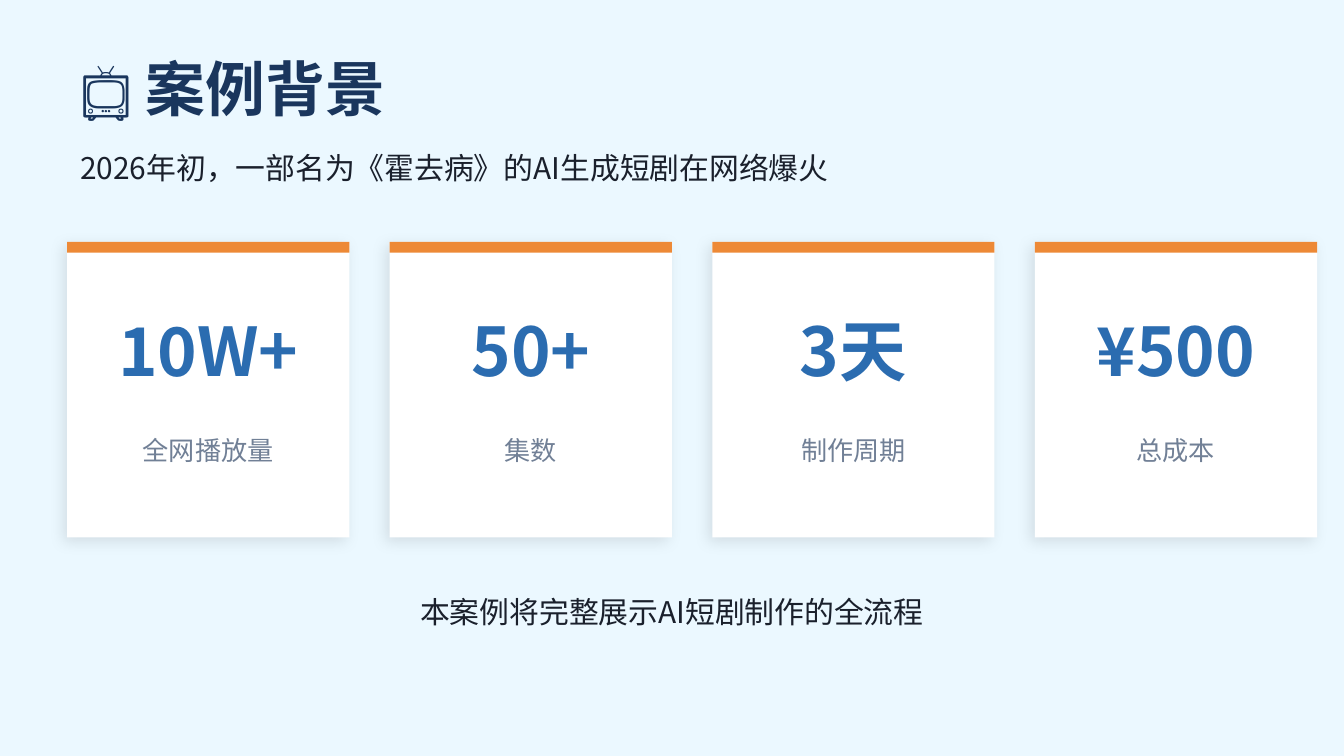
from lxml import etree
from pptx import Presentation
from pptx.dml.color import RGBColor
from pptx.enum.shapes import MSO_SHAPE
from pptx.enum.text import MSO_ANCHOR, MSO_AUTO_SIZE, PP_ALIGN
from pptx.oxml import parse_xml
from pptx.oxml.ns import nsdecls, qn
from pptx.util import Inches, Pt

RECTANGLE = MSO_SHAPE.RECTANGLE
MIDDLE = MSO_ANCHOR.MIDDLE
NO_AUTOFIT = MSO_AUTO_SIZE.NONE
LEFT, CENTER = PP_ALIGN.LEFT, PP_ALIGN.CENTER

PALE_BLUE = RGBColor(0xEB, 0xF8, 0xFF)
NAVY = RGBColor(0x1A, 0x36, 0x5D)
INK = RGBColor(0x1A, 0x20, 0x2C)
WHITE = RGBColor(0xFF, 0xFF, 0xFF)
ORANGE = RGBColor(0xED, 0x89, 0x36)
BLUE = RGBColor(0x2B, 0x6C, 0xB0)
GREY = RGBColor(0x71, 0x80, 0x96)

FONT = "Noto Sans CJK SC"
TITLE_STYLE = {"size": Pt(32), "bold": True, "color": NAVY}
BODY_STYLE = {"size": Pt(16), "bold": False, "color": INK}
NUMBER_STYLE = {"size": Pt(36), "bold": True, "color": BLUE}
LABEL_STYLE = {"size": Pt(14), "bold": False, "color": GREY}

# Page grid, 16:9
SLIDE_WIDTH = Inches(10)
SLIDE_HEIGHT = SLIDE_WIDTH * 9 // 16
MARGIN = Inches(0.5)
CONTENT_WIDTH = SLIDE_WIDTH - 2 * MARGIN
LINE_HEIGHT = Inches(0.5)
CARD_WIDTH, CARD_HEIGHT = Inches(2.1), Inches(2.2)
CARD_GAP = Inches(0.3)
CARD_ROWS = 22  # rows of the grid inside a card

METRICS = [
    ("10W+", "全网播放量"),
    ("50+", "集数"),
    ("3天", "制作周期"),
    ("¥500", "总成本"),
]


def place(shape, box):
    shape.left, shape.top, shape.width, shape.height = map(round, box)


def write_text(shape, text, style, alignment=LEFT):
    frame = shape.text_frame
    frame.word_wrap = True
    frame.auto_size = NO_AUTOFIT
    frame.vertical_anchor = MIDDLE
    paragraph = frame.paragraphs[0]
    paragraph.alignment = alignment
    run = paragraph.add_run()
    run.text = text
    font = run.font
    font.name = FONT
    for name, value in style.items():
        if name == "color":
            font.color.rgb = value
        else:
            setattr(font, name, value)
    # East Asian characters take their own font entry
    east_asian = etree.SubElement(run._r.get_or_add_rPr(), qn("a:ea"))
    east_asian.set("typeface", FONT)


def add_text(slide, box, text, style, alignment=LEFT):
    textbox = slide.shapes.add_textbox(*map(round, box))
    write_text(textbox, text, style, alignment)


def add_rectangle(slide, box, color):
    shape = slide.shapes.add_shape(RECTANGLE, *map(round, box))
    shape.shadow.inherit = False
    shape.fill.solid()
    shape.fill.fore_color.rgb = color
    shape.line.fill.background()
    return shape


def add_soft_shadow(shape):
    effects = shape._element.spPr.find(qn("a:effectLst"))
    effects.append(parse_xml(
        f'<a:outerShdw {nsdecls("a")} blurRad="{Pt(8)}" dist="{Pt(3)}"'
        f' dir="{135 * 60000}" algn="bl" rotWithShape="0">'
        '<a:srgbClr val="000000"><a:alpha val="10000"/></a:srgbClr>'
        "</a:outerShdw>"
    ))


def add_header(slide, box, title, subtitle):
    left, top, width, height = box
    title_height = height - LINE_HEIGHT
    place(slide.shapes.title, (left, top, width, title_height))
    write_text(slide.shapes.title, title, TITLE_STYLE)
    add_text(slide, (left, top + title_height, width, LINE_HEIGHT),
             subtitle, BODY_STYLE)


def add_card(slide, box, number, label):
    left, top, width, height = box
    row = height / CARD_ROWS
    add_soft_shadow(add_rectangle(slide, box, WHITE))
    add_rectangle(slide, (left, top, width, 0.8 * row), ORANGE)
    add_text(slide, (left, top + 4 * row, width, 8 * row),
             number, NUMBER_STYLE, CENTER)
    add_text(slide, (left, top + 13 * row, width, 5 * row),
             label, LABEL_STYLE, CENTER)


def add_card_row(slide, left, top, metrics):
    for column, (number, label) in enumerate(metrics):
        card_left = left + column * (CARD_WIDTH + CARD_GAP)
        add_card(slide, (card_left, top, CARD_WIDTH, CARD_HEIGHT), number, label)


def main():
    presentation = Presentation()
    presentation.slide_width = SLIDE_WIDTH
    presentation.slide_height = SLIDE_HEIGHT
    title_only = presentation.slide_layouts.get_by_name("Title Only")
    slide = presentation.slides.add_slide(title_only)
    slide.background.fill.solid()
    slide.background.fill.fore_color.rgb = PALE_BLUE

    # Heading
    add_header(slide, (MARGIN, Inches(0.3), CONTENT_WIDTH, Inches(1.2)),
               "📺 案例背景", "2026年初，一部名为《霍去病》的AI生成短剧在网络爆火")

    # Key figures
    add_card_row(slide, MARGIN, Inches(1.8), METRICS)

    # Closing line
    add_text(slide, (MARGIN, Inches(4.3), CONTENT_WIDTH, LINE_HEIGHT),
             "本案例将完整展示AI短剧制作的全流程", BODY_STYLE, CENTER)

    presentation.save("out.pptx")


if __name__ == "__main__":
    main()
